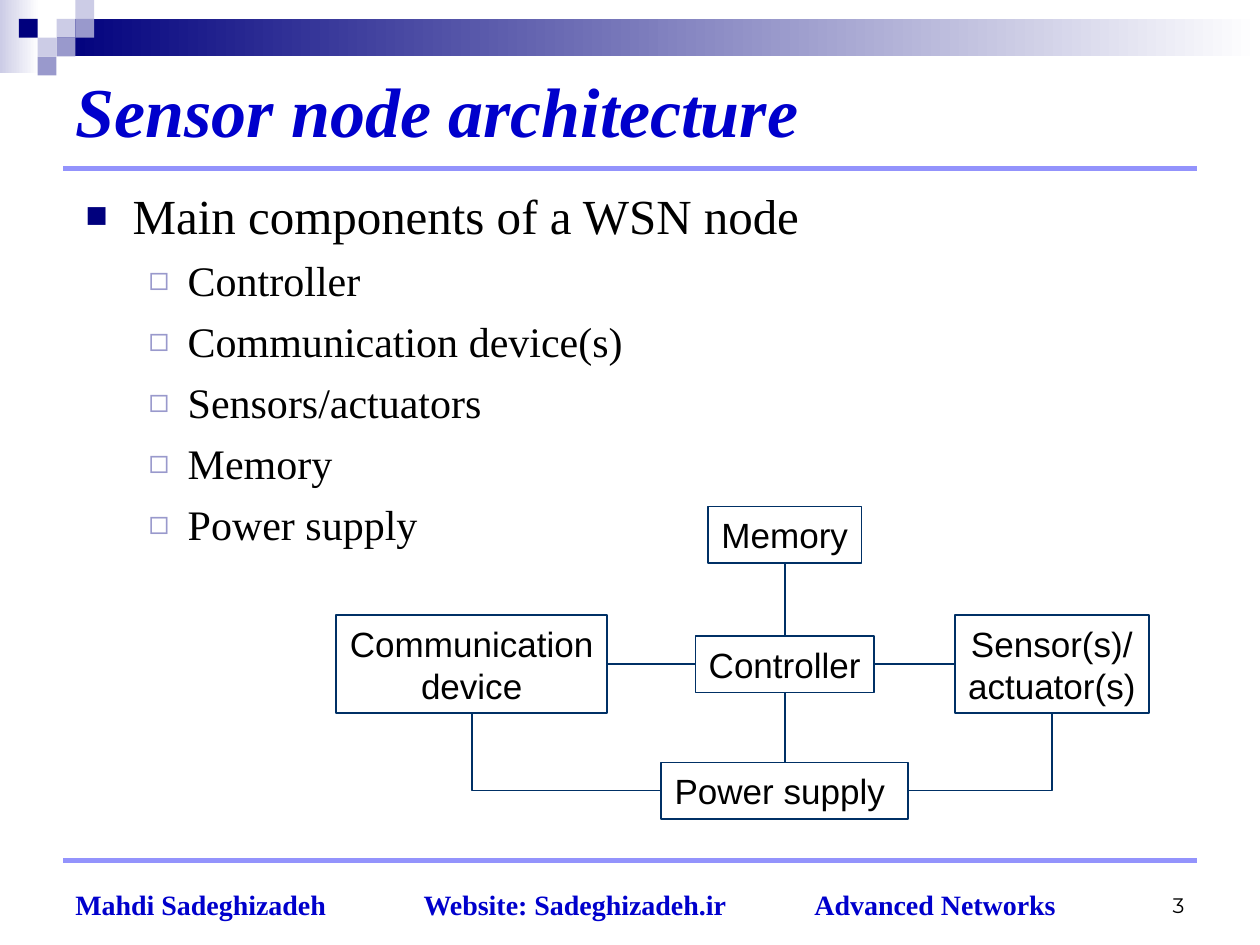
from dataclasses import dataclass

import pptx
import pptx.dml.color
import pptx.enum.dml
import pptx.enum.shapes
import pptx.enum.text
import pptx.oxml.ns
import pptx.oxml.xmlchemy
import pptx.util
from lxml import etree

Cm = pptx.util.Cm
Pt = pptx.util.Pt
RGBColor = pptx.dml.color.RGBColor
ALIGN = pptx.enum.text.PP_ALIGN
ANCHOR = pptx.enum.text.MSO_ANCHOR
CONNECTOR = pptx.enum.shapes.MSO_CONNECTOR
qn = pptx.oxml.ns.qn

NAVY = RGBColor(0x00, 0x00, 0x7D)
LAVENDER = RGBColor(0xCC, 0xCC, 0xE6)
PERIWINKLE = RGBColor(0x99, 0x99, 0xCC)
RULE_BLUE = RGBColor(0x93, 0x93, 0xFC)
TITLE_BLUE = RGBColor(0x00, 0x00, 0xCC)
DIAGRAM_BLUE = RGBColor(0x00, 0x30, 0x65)
BLACK = RGBColor(0x00, 0x00, 0x00)
WHITE = RGBColor(0xFF, 0xFF, 0xFF)
SERIF = "Times New Roman"


@dataclass
class Box:
    """A diagram block, in centimetres."""
    label: str
    left: float
    top: float
    width: float
    height: float = 1.14

    @property
    def right(self) -> float:
        return self.left + self.width

    @property
    def bottom(self) -> float:
        return self.top + self.height

    @property
    def center(self) -> float:
        return self.left + self.width / 2

    @property
    def middle(self) -> float:
        return self.top + self.height / 2


@dataclass
class BulletStyle:
    char: str
    color: RGBColor
    percent: int
    margin: float
    hanging: float
    size: int


def write(paragraph, text: str, *, size: float, font: str = SERIF, color=BLACK,
          bold=False, italic=False, align=ALIGN.LEFT) -> None:
    paragraph.text = text
    paragraph.alignment = align
    for run in paragraph.runs:
        run.font.size = Pt(size)
        run.font.name = font
        run.font.color.rgb = color
        run.font.bold = bold
        run.font.italic = italic


def place(shape, left: float, top: float, width: float, height: float) -> None:
    shape.left, shape.top = Cm(left), Cm(top)
    shape.width, shape.height = Cm(width), Cm(height)


def add_rect(slide, left: float, top: float, width: float, height: float,
             *colors: RGBColor):
    """No colour gives no fill, one a solid fill, two a gradient."""
    rect = slide.shapes.add_shape(pptx.enum.shapes.MSO_SHAPE.RECTANGLE,
                                  Cm(left), Cm(top), Cm(width), Cm(height))
    rect.shadow.inherit = False
    rect.line.fill.background()
    if len(colors) == 2:
        rect.fill.gradient()
        rect.fill.gradient_angle = 0
        for stop, color in zip(rect.fill.gradient_stops, colors):
            stop.color.rgb = color
    elif colors:
        rect.fill.solid()
        rect.fill.fore_color.rgb = colors[0]
    else:
        rect.fill.background()
    return rect


def add_line(slide, x1: float, y1: float, x2: float, y2: float,
             color=DIAGRAM_BLUE, width: float = 1, elbow: bool = False) -> None:
    kind = CONNECTOR.ELBOW if elbow else CONNECTOR.STRAIGHT
    line = slide.shapes.add_connector(kind, Cm(x1), Cm(y1), Cm(x2), Cm(y2))
    line.line.color.rgb = color
    line.line.width = Pt(width)
    properties = line._element.spPr
    if elbow:  # one bend: first across, then up or down
        properties.find(qn("a:prstGeom")).set("prst", "bentConnector2")
    etree.SubElement(properties, qn("a:effectLst"))


def add_block(slide, box: Box) -> None:
    block = add_rect(slide, box.left, box.top, box.width, box.height)
    block.line.color.rgb = DIAGRAM_BLUE
    block.line.width = Pt(1)
    frame = block.text_frame
    frame.word_wrap = False
    frame.vertical_anchor = ANCHOR.MIDDLE
    write(frame.paragraphs[0], box.label, size=20, font="Arial", align=ALIGN.CENTER)


def add_footer(slide, left: float, top: float, width: float, text: str, **text_format):
    footer = slide.shapes.add_textbox(Cm(left), Cm(top), Cm(width), Cm(1.27))
    footer.text_frame.word_wrap = True
    footer.text_frame.vertical_anchor = ANCHOR.BOTTOM
    paragraph = footer.text_frame.paragraphs[0]
    write(paragraph, text, **text_format)
    return paragraph


def set_bullet(paragraph, style: BulletStyle) -> None:
    properties = paragraph._p.get_or_add_pPr()
    properties.set("marL", str(Cm(style.margin)))
    properties.set("indent", str(-Cm(style.hanging)))
    color = etree.SubElement(properties, qn("a:buClr"))
    etree.SubElement(color, qn("a:srgbClr"), val=str(style.color))
    etree.SubElement(properties, qn("a:buSzPct"), val=str(style.percent * 1000))
    etree.SubElement(properties, qn("a:buFont"), typeface="Arial")
    etree.SubElement(properties, qn("a:buChar"), char=style.char)


def add_tabs(paragraph, *positions: float) -> None:
    tabs = etree.SubElement(paragraph._p.get_or_add_pPr(), qn("a:tabLst"))
    for position in positions:
        etree.SubElement(tabs, qn("a:tab"), pos=str(Cm(position)), algn="l")


def main() -> None:
    deck = pptx.Presentation()
    deck.slide_width, deck.slide_height = Cm(25.4), Cm(19.05)
    slide = deck.slides.add_slide(deck.slide_layouts[1])

    # Banner and its checkered corner
    add_rect(slide, 0, 0, 0.79, 1.47, LAVENDER, WHITE)
    add_rect(slide, 1.14, 0.38, 24.26, 0.76, NAVY, WHITE)
    tile = 0.38
    for column, row, color in [(3, 1, LAVENDER), (4, 0, LAVENDER), (4, 1, PERIWINKLE),
                               (2, 2, LAVENDER), (1, 1, NAVY), (3, 2, PERIWINKLE),
                               (2, 3, PERIWINKLE)]:
        add_rect(slide, column * tile, row * tile, tile, tile, color)

    # Title
    title = slide.shapes.title
    place(title, 1.27, 0.3, 22.86, 3.81)
    title.text_frame.vertical_anchor = ANCHOR.MIDDLE
    write(title.text_frame.paragraphs[0], "Sensor node architecture", size=40,
          color=TITLE_BLUE, bold=True, italic=True)

    # Component list
    components = slide.placeholders[1]
    place(components, 1.47, 3.61, 21.59, 6.98)
    frame = components.text_frame
    frame.auto_size = pptx.enum.text.MSO_AUTO_SIZE.NONE
    styles = [BulletStyle("■", NAVY, 75, 0.95, 0.95, 28),
              BulletStyle("◻", PERIWINKLE, 80, 2.06, 0.79, 24)]
    items = ["Main components of a WSN node", "Controller", "Communication device(s)",
             "Sensors/actuators", "Memory", "Power supply"]
    for index, item in enumerate(items):
        paragraph = frame.add_paragraph() if index else frame.paragraphs[0]
        paragraph.level = min(index, 1)
        style = styles[paragraph.level]
        set_bullet(paragraph, style)
        paragraph.space_before = Pt(6 if index else 0)
        write(paragraph, item, size=style.size)

    # Rules and footer
    for y in (3.39, 17.35):
        add_line(slide, 1.27, y, 24.13, y, RULE_BLUE, 3)
    credits = add_footer(slide, 1.27, 17.42, 20.96,
                         "Mahdi Sadeghizadeh\tWebsite: Sadeghizadeh.ir\tAdvanced Networks",
                         size=16, color=TITLE_BLUE, bold=True)
    add_tabs(credits, 7.02, 14.9)
    add_footer(slide, 18.21, 17.35, 5.92, "3", size=12, font="Montserrat",
               align=ALIGN.RIGHT)

    # Architecture diagram
    memory = Box("Memory", 14.27, 10.21, 3.1)
    controller = Box("Controller", 14.02, 12.82, 3.6)
    sensors = Box("Sensor(s)/\nactuator(s)", 19.25, 12.4, 3.91, 1.98)
    communication = Box("Communication\ndevice", 6.78, 12.4, 5.46, 1.98)
    power = Box("Power supply ", 13.33, 15.37, 4.98)
    for box in (memory, controller, sensors, communication, power):
        add_block(slide, box)
    for upper, lower in ((memory, controller), (controller, power)):
        add_line(slide, controller.center, upper.bottom, controller.center, lower.top)
    for left, right in ((communication, controller), (controller, sensors)):
        add_line(slide, left.right, controller.middle, right.left, controller.middle)
    for start, box in ((power.left, communication), (power.right, sensors)):
        add_line(slide, start, power.middle, box.center, box.bottom, elbow=True)

    deck.save("out.pptx")


if __name__ == "__main__":
    main()
